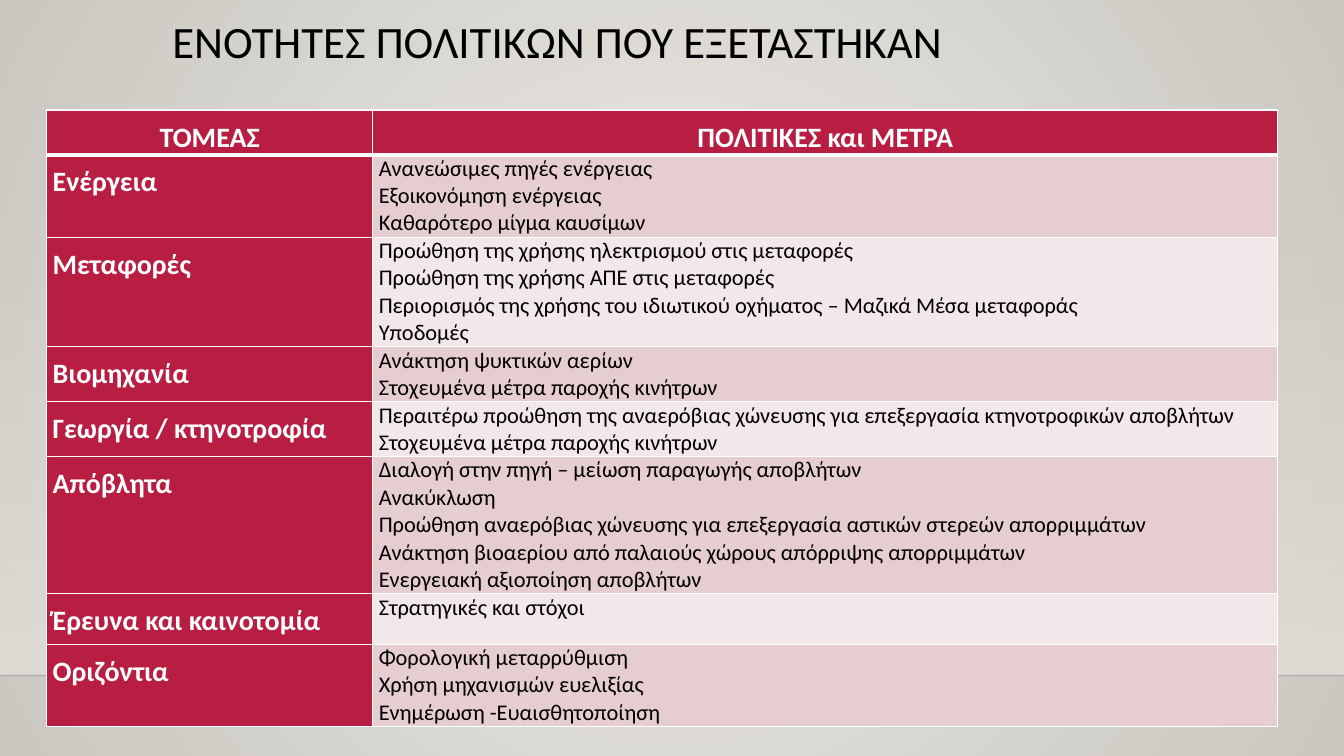
import pptx
import pptx.dml.color
import pptx.enum.shapes
import pptx.enum.text
import pptx.oxml
import pptx.oxml.ns
import pptx.util

Pt = pptx.util.Pt
Align = pptx.enum.text.PP_ALIGN
Anchor = pptx.enum.text.MSO_ANCHOR
NAMESPACE = pptx.oxml.ns.nsdecls("a")

COLORS = {
    "crimson": "B71E42",
    "white": "FFFFFF",
    "black": "000000",
    "band_dark": "E6CDCF",
    "band_light": "F3E8E9",
    "centre": "ECEAE7",
    "edge": "CAC7C1",
    "panel": "DFDBD5",
}

HEADINGS = ["ΤΟΜΕΑΣ", "ΠΟΛΙΤΙΚΕΣ και ΜΕΤΡΑ"]
SECTORS = [
    ("Ενέργεια", ["Ανανεώσιμες πηγές ενέργειας", "Εξοικονόμηση ενέργειας",
                  "Καθαρότερο μίγμα καυσίμων"]),
    ("Μεταφορές", ["Προώθηση της χρήσης ηλεκτρισμού στις μεταφορές",
                   "Προώθηση της χρήσης ΑΠΕ στις μεταφορές",
                   "Περιορισμός της χρήσης του ιδιωτικού οχήματος – Μαζικά Μέσα μεταφοράς",
                   "Υποδομές"]),
    ("Βιομηχανία", ["Ανάκτηση ψυκτικών αερίων", "Στοχευμένα μέτρα παροχής κινήτρων"]),
    ("Γεωργία / κτηνοτροφία",
     ["Περαιτέρω προώθηση της αναερόβιας χώνευσης για επεξεργασία κτηνοτροφικών αποβλήτων",
      "Στοχευμένα μέτρα παροχής κινήτρων"]),
    ("Απόβλητα", ["Διαλογή στην πηγή – μείωση παραγωγής αποβλήτων", "Ανακύκλωση",
                  "Προώθηση αναερόβιας χώνευσης για επεξεργασία αστικών στερεών απορριμμάτων",
                  "Ανάκτηση βιοαερίου από παλαιούς χώρους απόρριψης απορριμμάτων",
                  "Ενεργειακή αξιοποίηση αποβλήτων"]),
    ("Έρευνα και καινοτομία", ["Στρατηγικές και στόχοι"]),
    ("Οριζόντια", ["Φορολογική μεταρρύθμιση", "Χρήση μηχανισμών ευελιξίας",
                   "Ενημέρωση -Ευαισθητοποίηση"]),
]


def rgb(name):
    return pptx.dml.color.RGBColor.from_string(COLORS[name])


def write_text(frame, text, size=16, color="black", bold=False, align=Align.LEFT,
               spacing=1.0, font="Calibri"):
    """Write each line of the text as one paragraph."""
    for index, line in enumerate(text.split("\n")):
        paragraph = frame.add_paragraph() if index else frame.paragraphs[0]
        paragraph.alignment = align
        paragraph.line_spacing = spacing
        run = paragraph.add_run()
        run.text = line
        run.font.name = font
        run.font.size = Pt(size)
        run.font.bold = bold
        run.font.color.rgb = rgb(color)


def replace_solid_fill(parent, stops, direction):
    """Swap a solid fill for a gradient of (position, colour, opacity) stops."""
    stop_xml = "".join(
        f'<a:gs pos="{position * 1000}"><a:srgbClr val="{COLORS[color]}">'
        f'<a:alpha val="{opacity * 1000}"/></a:srgbClr></a:gs>'
        for position, color, opacity in stops)
    gradient = pptx.oxml.parse_xml(
        f'<a:gradFill {NAMESPACE} rotWithShape="1"><a:gsLst>{stop_xml}</a:gsLst>'
        f'{direction}</a:gradFill>')
    solid = next(parent.iter(pptx.oxml.ns.qn("a:solidFill")))
    solid.getparent().replace(solid, gradient)


class SlideBuilder:
    def __init__(self, presentation):
        self.slide = presentation.slides.add_slide(presentation.slide_layouts[6])

    def background(self, inner, outer):
        self.slide.background.fill.solid()
        self.slide.background.fill.fore_color.rgb = rgb(inner)
        replace_solid_fill(
            self.slide.element, [(0, inner, 100), (100, outer, 100)],
            '<a:path path="circle"><a:fillToRect l="50000" t="50000" r="50000" b="50000"/>'
            '</a:path>')

    def fading_panel(self, left, top, width, height, color):
        shape = self.slide.shapes.add_shape(
            pptx.enum.shapes.MSO_SHAPE.RECTANGLE, Pt(left), Pt(top), Pt(width), Pt(height))
        shape.shadow.inherit = False
        shape.line.fill.background()
        shape.fill.solid()
        shape.fill.fore_color.rgb = rgb(color)
        replace_solid_fill(shape.element.spPr, [(0, color, 0), (100, color, 100)],
                           '<a:lin ang="5400000" scaled="0"/>')

    def rule(self, left, top, width, color, weight, opacity):
        line = self.slide.shapes.add_connector(
            pptx.enum.shapes.MSO_CONNECTOR.STRAIGHT, Pt(left), Pt(top), Pt(left + width), Pt(top))
        line.line.width = Pt(weight)
        line.line.color.rgb = rgb(color)
        properties = line.element.spPr
        color_element = next(properties.iter(pptx.oxml.ns.qn("a:srgbClr")))
        color_element.append(
            pptx.oxml.parse_xml(f'<a:alpha {NAMESPACE} val="{opacity * 1000}"/>'))
        properties.append(pptx.oxml.parse_xml(f"<a:effectLst {NAMESPACE}/>"))

    def title(self, left, top, width, height, text):
        frame = self.slide.shapes.add_textbox(
            Pt(left), Pt(top), Pt(width), Pt(height)).text_frame
        frame.word_wrap = True
        frame.vertical_anchor = Anchor.MIDDLE
        write_text(frame, text, size=32, spacing=0.9)

    def table(self, left, top, widths, heights):
        table = self.slide.shapes.add_table(
            len(heights), len(widths), Pt(left), Pt(top),
            Pt(sum(widths)), Pt(sum(heights))).table
        table.horz_banding = False
        for column, width in zip(table.columns, widths):
            column.width = Pt(width)
        for row, height in zip(table.rows, heights):
            row.height = Pt(height)
        return table

    def cell(self, cell, text, fill, top_border=1, bottom_border=1, **text_format):
        cell.margin_left = cell.margin_right = Pt(4.3)
        cell.margin_top = cell.margin_bottom = 0
        cell.fill.solid()
        cell.fill.fore_color.rgb = rgb(fill)
        borders = {"L": 1, "R": 1, "T": top_border, "B": bottom_border}
        for index, (side, weight) in enumerate(borders.items()):
            cell._tc.get_or_add_tcPr().insert(index, pptx.oxml.parse_xml(
                f'<a:ln{side} {NAMESPACE} w="{Pt(weight)}"><a:solidFill>'
                f'<a:srgbClr val="{COLORS["white"]}"/></a:solidFill></a:ln{side}>'))
        write_text(cell.text_frame, text, **text_format)


def main():
    presentation = pptx.Presentation()
    presentation.slide_width = Pt(960)
    presentation.slide_height = Pt(540)
    builder = SlideBuilder(presentation)

    # Backdrop
    builder.background("centre", "edge")
    builder.fading_panel(0, 159, 960, 323.5, "panel")
    builder.rule(0, 482.5, 960, "black", weight=1, opacity=20)

    # Title
    builder.title(116, 9.4, 756, 44.6, "ΕΝΟΤΗΤΕΣ ΠΟΛΙΤΙΚΩΝ ΠΟΥ ΕΞΕΤΑΣΤΗΚΑΝ")

    # Table: each row is as tall as its list of measures
    heights = [32] + [max(36, 19.6 * len(measures)) for _, measures in SECTORS]
    table = builder.table(33.3, 78.6, [233, 646.5], heights)
    label = {"size": 20, "color": "white", "bold": True, "spacing": 1.3}
    for column, heading in enumerate(HEADINGS):
        builder.cell(table.cell(0, column), heading, "crimson", bottom_border=3,
                     align=Align.CENTER, **label)
    for row, (sector, measures) in enumerate(SECTORS, start=1):
        top_border = 3 if row == 1 else 1
        band = "band_dark" if row % 2 else "band_light"
        builder.cell(table.cell(row, 0), sector, "crimson", top_border,
                     align=Align.JUSTIFY, **label)
        builder.cell(table.cell(row, 1), "\n".join(measures), band, top_border,
                     align=Align.JUSTIFY)

    presentation.save("out.pptx")


if __name__ == "__main__":
    main()
